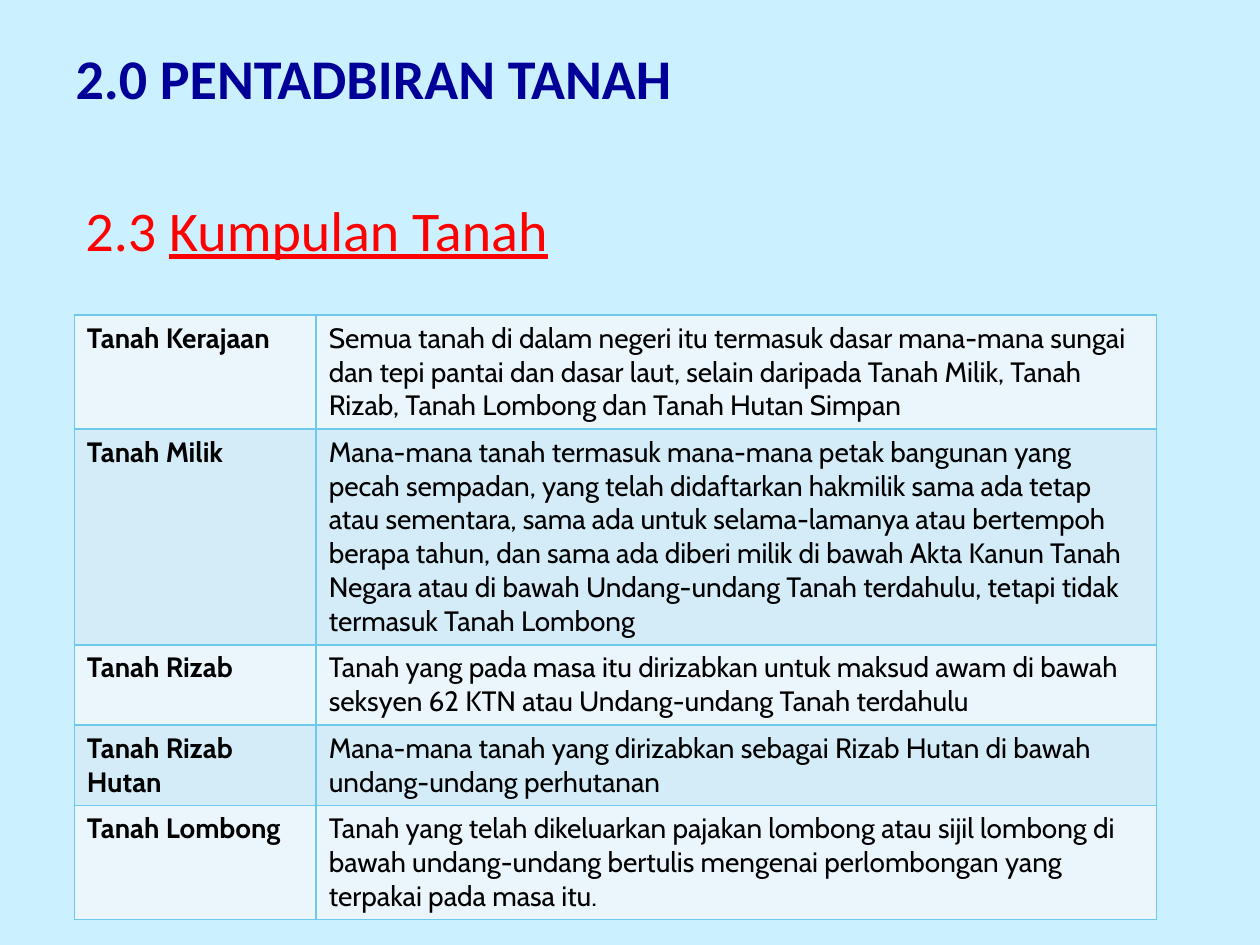
import pptx
import pptx.dml.color
import pptx.enum.text
import pptx.oxml
import pptx.oxml.ns
import pptx.util

Inches = pptx.util.Inches
RGBColor = pptx.dml.color.RGBColor

BACKGROUND = RGBColor(0xCB, 0xF0, 0xFF)
NAVY = RGBColor(0x00, 0x00, 0x99)
RED = RGBColor(0xFF, 0x00, 0x00)
BLACK = RGBColor(0x00, 0x00, 0x00)
BORDER = RGBColor(0x6D, 0xC9, 0xEE)
ROW_FILLS = (RGBColor(0xEB, 0xF5, 0xFC), RGBColor(0xD4, 0xEB, 0xF8))

HEADING_FONT = "Calibri"
TABLE_FONT = "Cabin"

COLUMN_WIDTHS = (1.92, 6.67)
# Row height in inches, land group, definition
LAND_GROUPS = (
    (0.9, "Tanah Kerajaan",
     "Semua tanah di dalam negeri itu termasuk dasar mana-mana sungai dan tepi "
     "pantai dan dasar laut, selain daripada Tanah Milik, Tanah Rizab, Tanah "
     "Lombong dan Tanah Hutan Simpan"),
    (1.7, "Tanah Milik",
     "Mana-mana tanah termasuk mana-mana petak bangunan yang pecah sempadan, "
     "yang telah didaftarkan hakmilik sama ada tetap atau sementara, sama ada "
     "untuk selama-lamanya atau bertempoh berapa tahun, dan sama ada diberi "
     "milik di bawah Akta Kanun Tanah Negara atau di bawah Undang-undang Tanah "
     "terdahulu, tetapi tidak termasuk Tanah Lombong"),
    (0.63, "Tanah Rizab",
     "Tanah yang pada masa itu dirizabkan untuk maksud awam di bawah seksyen 62 "
     "KTN atau Undang-undang Tanah terdahulu"),
    (0.63, "Tanah Rizab Hutan",
     "Mana-mana tanah yang dirizabkan sebagai Rizab Hutan di bawah "
     "undang-undang perhutanan"),
    (0.9, "Tanah Lombong",
     "Tanah yang telah dikeluarkan pajakan lombong atau sijil lombong di bawah "
     "undang-undang bertulis mengenai perlombongan yang terpakai pada masa itu."),
)


def add_text(paragraph, text, *, font=HEADING_FONT, size=32, color=BLACK,
             bold=False, underline=None):
    run = paragraph.add_run()
    run.text = text
    run.font.name = font
    run.font.size = pptx.util.Pt(size)
    run.font.color.rgb = color
    run.font.bold = bold
    run.font.underline = underline


def add_borders(cell, color, width=1):
    """Draw all four sides; the lines must come before the cell's fill."""
    properties = cell._tc.get_or_add_tcPr()
    for index, side in enumerate(("lnL", "lnR", "lnT", "lnB")):
        properties.insert(index, pptx.oxml.parse_xml(
            f'<a:{side} {pptx.oxml.ns.nsdecls("a")} w="{pptx.util.Pt(width)}">'
            f'<a:solidFill><a:srgbClr val="{color}"/></a:solidFill></a:{side}>'))


class SlideBuilder:
    def __init__(self, presentation):
        self.slide = presentation.slides.add_slide(presentation.slide_layouts[5])
        fill = self.slide.background.fill
        fill.solid()
        fill.fore_color.rgb = BACKGROUND

    def title(self, text, left, top, width, height):
        shape = self.slide.shapes.title
        shape.left, shape.top = Inches(left), Inches(top)
        shape.width, shape.height = Inches(width), Inches(height)
        frame = shape.text_frame
        frame.vertical_anchor = pptx.enum.text.MSO_ANCHOR.MIDDLE
        paragraph = frame.paragraphs[0]
        paragraph.alignment = pptx.enum.text.PP_ALIGN.LEFT
        add_text(paragraph, text, color=NAVY, bold=True)

    def subtitle(self, number, text, left, top, width, height):
        shape = self.slide.shapes.add_textbox(
            Inches(left), Inches(top), Inches(width), Inches(height))
        frame = shape.text_frame
        frame.word_wrap = False
        frame.auto_size = pptx.enum.text.MSO_AUTO_SIZE.SHAPE_TO_FIT_TEXT
        paragraph = frame.paragraphs[0]
        add_text(paragraph, f"{number} ", color=RED)
        add_text(paragraph, text, color=RED, underline=True)

    def table(self, groups, left, top):
        height = sum(group[0] for group in groups)
        table = self.slide.shapes.add_table(
            len(groups), len(COLUMN_WIDTHS), Inches(left), Inches(top),
            Inches(sum(COLUMN_WIDTHS)), Inches(height)).table
        table.first_row = False
        for column, width in zip(table.columns, COLUMN_WIDTHS):
            column.width = Inches(width)
        for index, (row_height, *texts) in enumerate(groups):
            row = table.rows[index]
            row.height = Inches(row_height)
            for position, (cell, text) in enumerate(zip(row.cells, texts)):
                cell.fill.solid()
                cell.fill.fore_color.rgb = ROW_FILLS[index % 2]
                add_borders(cell, BORDER)
                add_text(cell.text_frame.paragraphs[0], text, font=TABLE_FONT,
                         size=16, bold=position == 0)


def main():
    presentation = pptx.Presentation()
    presentation.slide_width = Inches(10)
    presentation.slide_height = Inches(7.5)
    builder = SlideBuilder(presentation)
    builder.table(LAND_GROUPS, 0.59, 2.5)
    builder.subtitle("2.3", "Kumpulan Tanah", 0.58, 1.5, 4.01, 0.64)
    builder.title("2.0 PENTADBIRAN TANAH", 0.5, 0.17, 9, 0.89)
    presentation.save("out.pptx")


if __name__ == "__main__":
    main()
